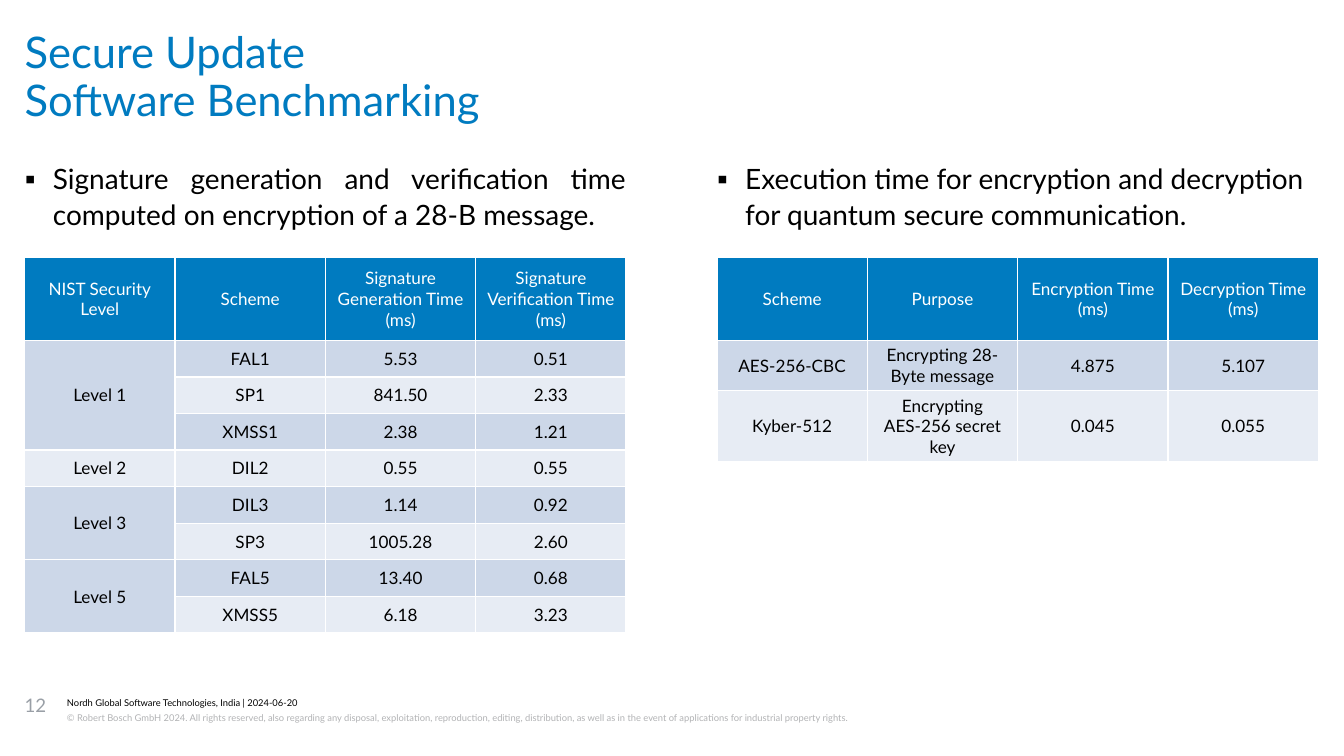
"""Build the software benchmarking slide with two result tables."""
from lxml.etree import SubElement
from pptx import Presentation
from pptx.dml.color import RGBColor
from pptx.enum.text import MSO_ANCHOR, PP_ALIGN
from pptx.oxml import parse_xml
from pptx.oxml.ns import nsdecls, qn
from pptx.util import Cm, Pt

FONT = "Lato"
BLUE, BLACK, WHITE = "007BC0", "000000", "FFFFFF"
BANDS = ("CCD7E8", "E7ECF4")
LEFT, RIGHT, WIDTH = 0.56, 16.26, 13.64
LIST_TOP, LIST_HEIGHT, TABLE_TOP = 3.61, 11.79, 5.84
HEADER_HEIGHT = 1.88

SUBJECT = "Secure\u00a0Update"
TITLE = "Software Benchmarking"
SIGNATURE_POINT = "Signature generation and verification time computed on encryption of a 28-B message."
ENCRYPTION_POINT = "Execution time for encryption and decryption for quantum secure communication."
SIGNATURE_ROWS = [
    ("NIST Security\nLevel", "Scheme", "Signature\nGeneration Time (ms)", "Signature Verification Time (ms)"),
    ("Level 1", "FAL1", "5.53", "0.51"),
    ("", "SP1", "841.50", "2.33"),
    ("", "XMSS1", "2.38", "1.21"),
    ("Level 2", "DIL2", "0.55", "0.55"),
    ("Level 3", "DIL3", "1.14", "0.92"),
    ("", "SP3", "1005.28", "2.60"),
    ("Level 5", "FAL5", "13.40", "0.68"),
    ("", "XMSS5", "6.18", "3.23"),
]
ENCRYPTION_ROWS = [
    ("Scheme", "Purpose", "Encryption Time (ms)", "Decryption Time (ms)"),
    ("AES-256-CBC", "Encrypting 28-Byte message", "4.875", "5.107"),
    ("Kyber-512", "Encrypting AES-256 secret key", "0.045", "0.055"),
]
SMALL_TEXTS = [
    ("Nordh Global Software Technologies, India | 2024-06-20", (1.52, 15.8, 25.35, 0.3), 6, BLACK, 1.07),
    ("© Robert Bosch GmbH 2024. All rights reserved, also regarding any disposal, exploitation, "
     "reproduction, editing, distribution, as well as in the event of applications for industrial "
     "property rights.", (1.52, 16.1, 25.35, 0.61), 6, "B2B3B5", 1.2),
    ("12", (LEFT, 15.75, 0.81, 1.14), 12, "999FA6", 1.0),
]


def color(value):
    return RGBColor.from_string(value)


def write(text_frame, text, size, font_color, alignment=PP_ALIGN.LEFT, spacing=1.0):
    text_frame.text = text
    for paragraph in text_frame.paragraphs:
        paragraph.alignment = alignment
        paragraph.line_spacing = spacing
        paragraph.space_before = Pt(0)
        for run in paragraph.runs:
            run.font.name = FONT
            run.font.size = Pt(size)
            run.font.bold = False
            run.font.color.rgb = color(font_color)


def place(shape, box):
    shape.left, shape.top, shape.width, shape.height = map(Cm, box)
    text_frame = shape.text_frame
    text_frame.word_wrap = True
    text_frame.vertical_anchor = MSO_ANCHOR.TOP
    text_frame.margin_left = text_frame.margin_right = 0
    text_frame.margin_top = text_frame.margin_bottom = 0
    return text_frame


def add_point(shape, left, text, alignment):
    text_frame = place(shape, (left, LIST_TOP, WIDTH, LIST_HEIGHT))
    write(text_frame, text, 18, BLACK, alignment, 1.07)
    properties = text_frame.paragraphs[0]._p.get_or_add_pPr()
    properties.set("marL", str(Cm(0.64)))
    properties.set("indent", str(Cm(-0.64)))
    SubElement(properties, qn("a:buFont"), typeface=FONT)
    SubElement(properties, qn("a:buChar"), char="▪")


def format_cell(cell, fill):
    cell.fill.solid()
    cell.fill.fore_color.rgb = color(fill)
    cell.vertical_anchor = MSO_ANCHOR.MIDDLE
    cell.margin_left = cell.margin_right = Cm(0.23)
    cell.margin_top = cell.margin_bottom = Cm(0.1)
    properties = cell._tc.get_or_add_tcPr()
    for position, side in enumerate("LRTB"):
        properties.insert(position, parse_xml(
            f'<a:ln{side} {nsdecls("a")} w="{Pt(1)}"><a:solidFill>'
            f'<a:srgbClr val="{WHITE}"/></a:solidFill></a:ln{side}>'))


def add_results(slide, left, rows, body_heights):
    heights = [HEADER_HEIGHT, *body_heights]
    frame = slide.shapes.add_table(len(rows), len(rows[0]), Cm(left), Cm(TABLE_TOP),
                                   Cm(WIDTH), Cm(sum(heights)))
    table = frame.table
    for row, height in zip(table.rows, heights):
        row.height = Cm(height)
    level_start = 0
    for row_index, values in enumerate(rows):
        fill = BANDS[(row_index - 1) % 2] if row_index else BLUE
        for column_index, value in enumerate(values):
            cell = table.cell(row_index, column_index)
            format_cell(cell, fill)
            if value:
                write(cell.text_frame, value, 11, BLACK if row_index else WHITE, PP_ALIGN.CENTER)
        if values[0]:
            level_start = row_index
        elif row_index + 1 == len(rows) or rows[row_index + 1][0]:
            table.cell(level_start, 0).merge(table.cell(row_index, 0))


def main():
    presentation = Presentation()
    presentation.slide_width, presentation.slide_height = Cm(30.48), Cm(17.15)
    slide = presentation.slides.add_slide(presentation.slide_layouts.get_by_name("Comparison"))
    title, subject, signature_list, unused, encryption_list = slide.placeholders
    unused.element.getparent().remove(unused.element)

    for shape, text, top in ((subject, SUBJECT, 0.71), (title, TITLE, 1.8)):
        write(place(shape, (LEFT, top, 29.34, 1.09)), text, 28, BLUE, spacing=0.89)
    add_point(signature_list, LEFT, SIGNATURE_POINT, PP_ALIGN.JUSTIFY)
    add_point(encryption_list, RIGHT, ENCRYPTION_POINT, PP_ALIGN.LEFT)
    add_results(slide, LEFT, SIGNATURE_ROWS, [0.83] * 8)
    add_results(slide, RIGHT, ENCRYPTION_ROWS, [1.12, 1.14])
    for text, box, size, font_color, spacing in SMALL_TEXTS:
        text_box = slide.shapes.add_textbox(*map(Cm, box))
        write(place(text_box, box), text, size, font_color, spacing=spacing)
    presentation.save("out.pptx")


if __name__ == "__main__":
    main()
